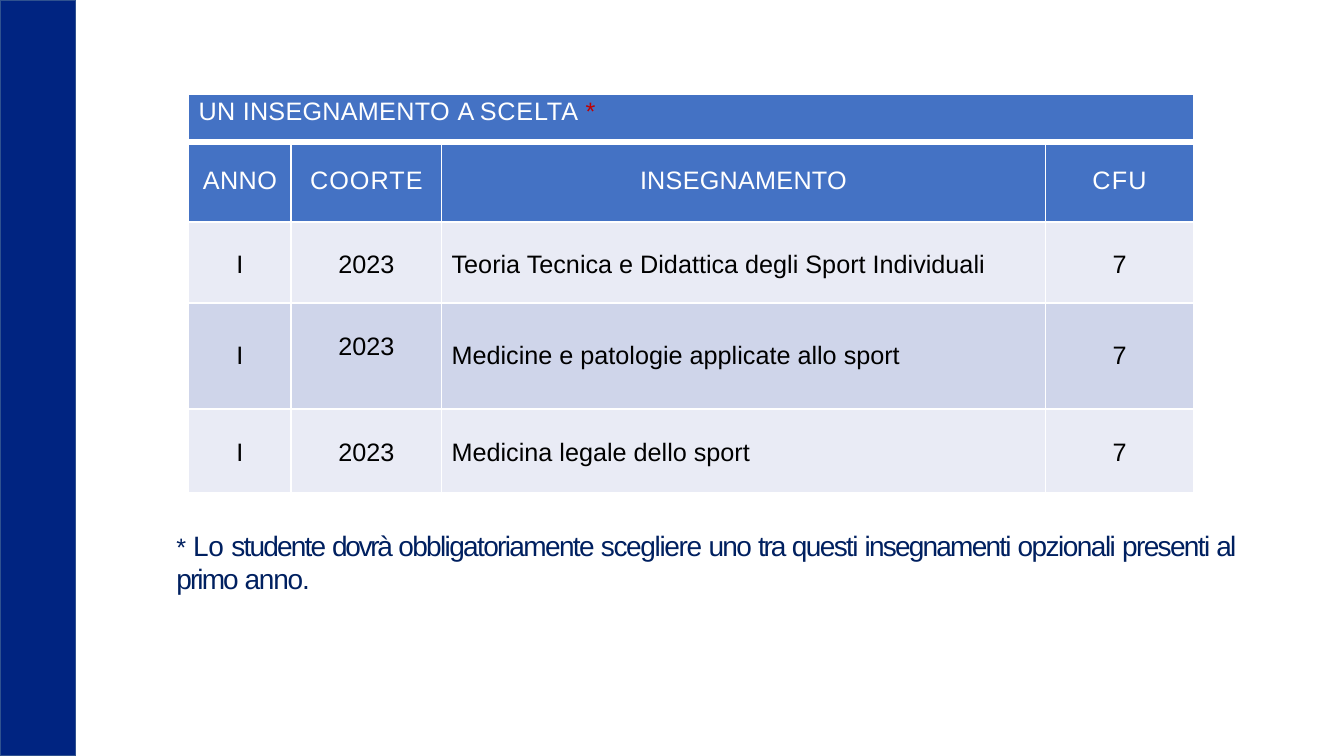
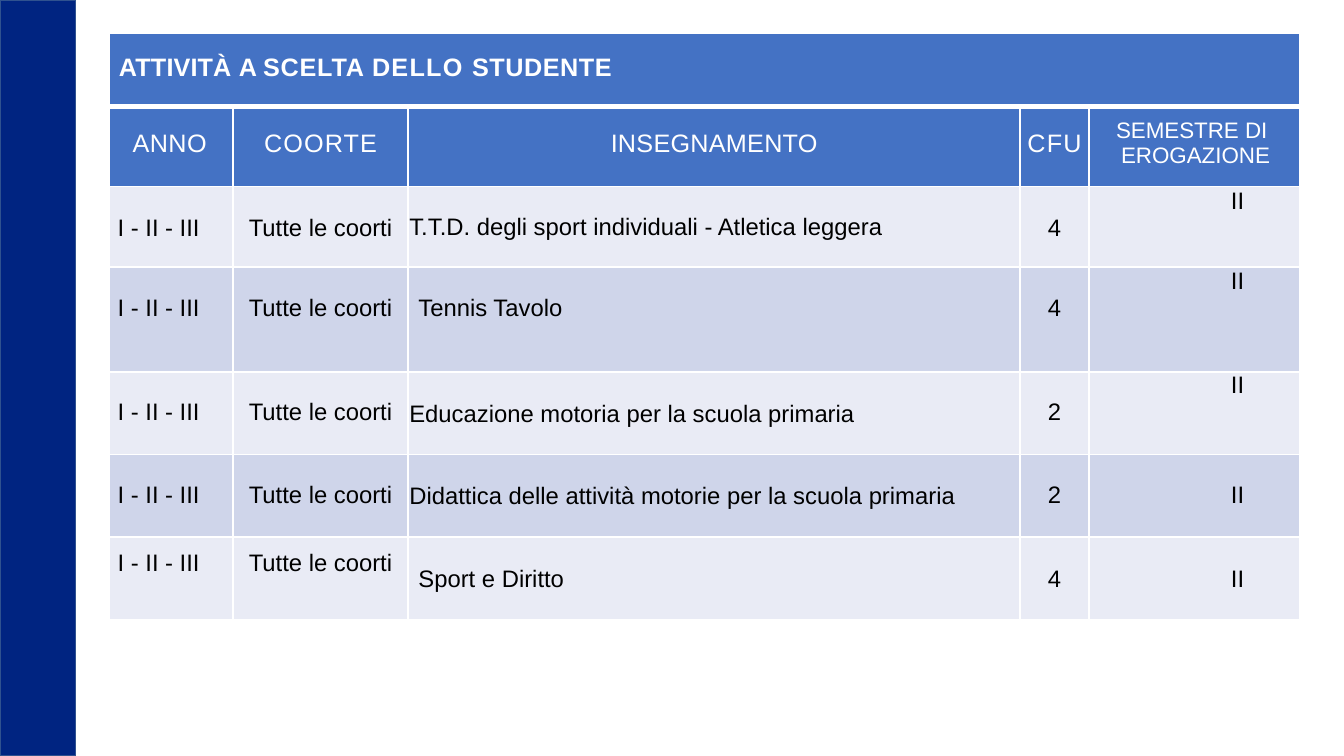
import pptx
import pptx.util
import pptx.dml.color
import pptx.enum.shapes
import pptx.enum.text
import pptx.oxml

Inches = pptx.util.Inches
Pt = pptx.util.Pt
RGBColor = pptx.dml.color.RGBColor
ALIGN = pptx.enum.text.PP_ALIGN
ANCHOR = pptx.enum.text.MSO_ANCHOR

FONT = "Arial"
NAVY = RGBColor(0x00, 0x24, 0x81)
BAND_EDGE = RGBColor(0x2F, 0x52, 0x8F)
NOTE_BLUE = RGBColor(0x00, 0x20, 0x60)
HEADER_BLUE = RGBColor(0x44, 0x72, 0xC4)
ROW_FILLS = (RGBColor(0xE9, 0xEB, 0xF5), RGBColor(0xCF, 0xD5, 0xEA))
WHITE = RGBColor(0xFF, 0xFF, 0xFF)
BLACK = RGBColor(0x00, 0x00, 0x00)
RED = RGBColor(0xC0, 0x00, 0x00)

GRID_LINE, TITLE_LINE = 1.5, 4.25
NO_MARGINS = dict.fromkeys(
    ("margin_left", "margin_top", "margin_right", "margin_bottom"), 0)


def apply_format(target, values):
    for name, value in values.items():
        setattr(target, name, value)


def add_runs(paragraph, runs, size, color, bold=False):
    """Write runs given as (text, letter spacing in points, overrides)."""
    for text, spacing, *overrides in runs:
        run = paragraph.add_run()
        run.text = text
        font = {"name": FONT, "size": Pt(size), "bold": bold}
        run_color = color
        for override in overrides:
            run_color = override.get("color", run_color)
            font["size"] = Pt(override.get("size", size))
        apply_format(run.font, font)
        run.font.color.rgb = run_color
        if spacing:
            run.font._element.set("spc", str(round(spacing * 100)))


def set_borders(cell, top, bottom):
    properties = cell._tc.get_or_add_tcPr()
    widths = (("L", GRID_LINE), ("R", GRID_LINE), ("T", top), ("B", bottom))
    for position, (side, width) in enumerate(widths):
        border = pptx.oxml.parse_xml(
            '<a:ln%s xmlns:a="http://schemas.openxmlformats.org/drawingml/2006/main"'
            ' w="%d"><a:solidFill><a:srgbClr val="%s"/></a:solidFill></a:ln%s>'
            % (side, Pt(width), WHITE, side))
        properties.insert(position, border)


def fill_cell(cell, runs, size, color, align=ALIGN.CENTER, bold=False, **layout):
    """Write one cell; layout holds margins in inches and the anchor."""
    anchor = layout.pop("anchor", ANCHOR.TOP)
    margins = {"margin_" + side: Inches(value) for side, value in layout.items()}
    apply_format(cell, {**NO_MARGINS, **margins, "vertical_anchor": anchor})
    paragraph = cell.text_frame.paragraphs[0]
    paragraph.alignment = align
    add_runs(paragraph, runs, size, color, bold)
    return paragraph


def add_course_table(slide, left, top, widths, heights, title, header, rows, size):
    """Title row over all columns, header row, then banded rows of (text, format)."""
    table = slide.shapes.add_table(
        len(heights), len(widths), Inches(left), Inches(top),
        Inches(sum(widths)), Inches(sum(heights))).table
    for column, width in zip(table.columns, widths):
        column.width = Inches(width)
    for index, (row, height) in enumerate(zip(table.rows, heights)):
        row.height = Inches(height)
        for cell in row.cells:
            cell.fill.solid()
            cell.fill.fore_color.rgb = HEADER_BLUE if index < 2 else ROW_FILLS[index % 2]
            set_borders(cell, TITLE_LINE if index == 1 else GRID_LINE,
                        TITLE_LINE if index == 0 else GRID_LINE)

    title_cell = table.cell(0, 0)
    title_cell.merge(table.cell(0, len(widths) - 1))
    title_runs, title_format = title
    fill_cell(title_cell, title_runs, 18, WHITE, ALIGN.LEFT, left=0.1, **title_format)
    for column, (label, spacing, cell_format) in enumerate(header):
        fill_cell(table.cell(1, column), [(label, spacing)], 18, WHITE, **cell_format)
    for index, row in enumerate(rows, start=2):
        for column, (text, cell_format) in enumerate(row):
            fill_cell(table.cell(index, column), [(text, 0)], size, BLACK, **cell_format)
    return table


def add_side_band(slide, height):
    band = slide.shapes.add_shape(
        pptx.enum.shapes.MSO_SHAPE.RECTANGLE, 0, 0, Inches(0.75), height)
    band.shadow.inherit = False
    band.fill.solid()
    band.fill.fore_color.rgb = NAVY
    band.line.color.rgb = BAND_EDGE
    band.line.width = Pt(1)


def add_note(slide, left, top, width, height):
    frame = slide.shapes.add_textbox(
        Inches(left), Inches(top), Inches(width), Inches(height)).text_frame
    apply_format(frame, {**NO_MARGINS, "margin_top": Inches(0.01),
                         "margin_left": Inches(0.01), "word_wrap": True})
    add_runs(frame.paragraphs[0], [
        ("* ", 0, {"size": 18}), ("Lo ", -0.3), ("studente ", -1.3), ("dovrà ", -1.7),
        ("obbligatoriamente ", -1.2), ("scegliere ", -1), ("uno ", -1.2),
        ("tra ", -1.6), ("questi ", -1.2), ("insegnamenti ", -1.3),
        ("opzionali ", -1.1), ("presenti ", -1.2), ("al ", -1.3),
        ("primo ", -1.4), ("anno.", -0.9)], 20, NOTE_BLUE)


def build_required_choice(slide):
    header_format = {"top": 0.24}
    header = [("ANNO", 0.3, header_format), ("COORTE", 0.8, header_format),
              ("INSEGNAMENTO", 0.2, header_format), ("CFU", 0.9, header_format)]
    courses = [("Teoria Tecnica e Didattica degli Sport Individuali", 0.29),
               ("Medicine e patologie applicate allo sport", 0.38),
               ("Medicina legale dello sport", 0.29)]
    rows = [[("I", {"top": drop}),
             ("2023", {"top": 0.29}),
             (course, {"top": drop, "left": 0.1, "align": ALIGN.LEFT}),
             ("7", {"top": drop})] for course, drop in courses]
    title = [("UN INSEGNAMENTO ", 0.2), ("A ", -0.1), ("SCELTA ", 0.6),
             ("*", 2.1, {"color": RED})]
    add_course_table(slide, 1.87, 0.93, (1.02, 1.49, 5.99, 1.47),
                     (0.48, 0.79, 0.81, 1.05, 0.83),
                     (title, {"top": 0.04}), header, rows, 18)
    add_note(slide, 1.74, 5.23, 11.03, 0.69)


def build_free_choice(slide):
    header_format = {"top": 0.23}
    header = [("ANNO", 0.3, {**header_format, "right": 0.26, "align": ALIGN.RIGHT}),
              ("COORTE", 0.8, header_format), ("INSEGNAMENTO", 0.2, header_format),
              ("CFU", 0.9, header_format)]
    middle = {"anchor": ANCHOR.MIDDLE, "left": 0.01, "top": 0.01, "right": 0.01}
    indented = {"left": 0.1, "top": 0.28}
    # course, its format, credits, drop of year and cohort, of credits, of semester
    courses = [
        ("T.T.D. degli sport individuali - Atletica leggera", middle, "4", 0.28, 0.28, 0.01),
        ("Tennis Tavolo", indented, "4", 0.28, 0.28, 0.01),
        ("Educazione motoria per la scuola primaria", middle, "2", 0.27, 0.27, 0),
        ("Didattica delle attività motorie per la scuola primaria", middle, "2",
         0.27, 0.27, 0.27),
        ("Sport e Diritto", indented, "4", 0.13, 0.28, 0.28)]
    rows = [[("I - II - III", {"top": year_drop, "right": 0.24}),
             ("Tutte le coorti", {"top": year_drop}),
             (course, {**course_format, "align": ALIGN.LEFT}),
             (credits, {"top": credits_drop}),
             ("II", {"top": semester_drop, "left": 0.86})]
            for course, course_format, credits, year_drop, credits_drop, semester_drop
            in courses]
    title = [("ATTIVITÀ ", 0.1), ("A ", -0.1), ("SCELTA ", 0.6), ("DELLO ", 0.9),
             ("STUDENTE", 0.4)]
    table = add_course_table(slide, 1.08, 0.33, (1.23, 1.74, 6.07, 0.68, 2.09),
                             (0.73, 0.79, 0.8, 1.04, 0.82, 0.82, 0.82),
                             (title, {"top": 0.2, "bold": True}), header, rows, 17)
    semester = fill_cell(table.cell(1, 4), [("SEMESTRE DI", 0)], 16, WHITE,
                         ALIGN.LEFT, top=0.11)
    semester.add_line_break()
    add_runs(semester, [("EROGAZIONE", 0)], 16, WHITE)
    semester.line_spacing = 1.02
    properties = semester._p.get_or_add_pPr()
    properties.set("marL", str(Inches(0.32)))
    properties.set("indent", str(Inches(-0.05)))


def main():
    deck = pptx.Presentation()
    deck.slide_width, deck.slide_height = Inches(13.33), Inches(7.5)
    for build in (build_required_choice, build_free_choice):
        slide = deck.slides.add_slide(deck.slide_layouts[6])
        add_side_band(slide, deck.slide_height)
        build(slide)
    deck.save("out.pptx")


if __name__ == "__main__":
    main()
